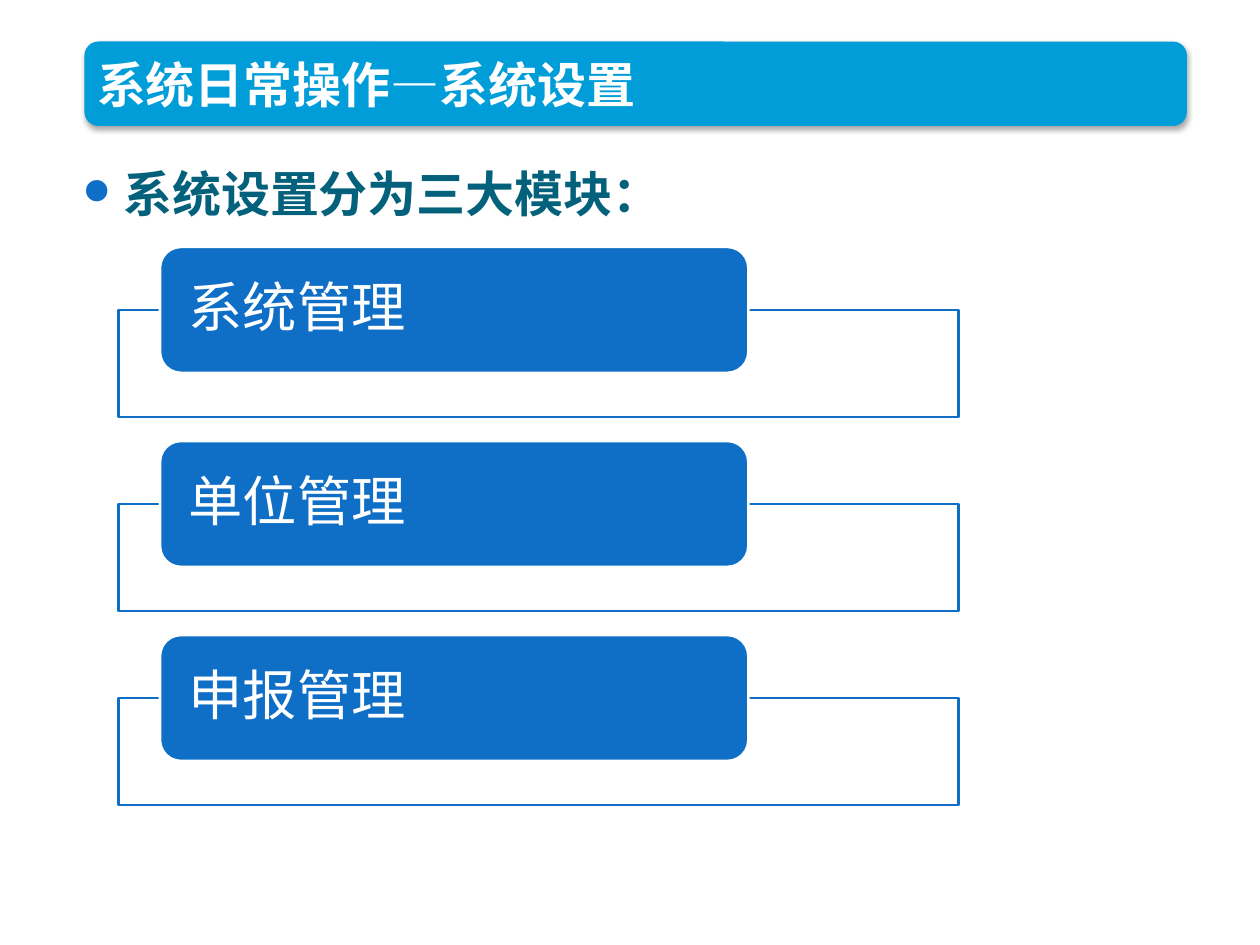
from lxml import etree
from pptx import Presentation
from pptx.dml.color import RGBColor
from pptx.enum import shapes, text
from pptx.oxml import ns
from pptx.util import Inches, Pt

WHITE = RGBColor(0xFF, 0xFF, 0xFF)
CYAN = RGBColor(0x00, 0x9D, 0xD9)
BLUE = RGBColor(0x0F, 0x6F, 0xC6)
TEAL = RGBColor(0x04, 0x61, 0x7B)
SANS = "DejaVu Sans"
CJK = "Noto Sans CJK SC"


def sub(node, tag, **attrs):
    kid = etree.SubElement(node, ns.qn(tag))
    for key, val in attrs.items():
        kid.set(key, str(val))
    return kid


def write(para, words, face, size, color, bold=False):
    para.alignment = text.PP_ALIGN.LEFT
    run = para.add_run()
    run.text = words
    run.font.name = face
    run.font.size = Pt(size)
    run.font.bold = bold
    run.font.color.rgb = color
    sub(run.font._element, "a:ea", typeface=face)


prs = Presentation()
prs.slide_width, prs.slide_height = Inches(10), Inches(7.5)
slide = prs.slides.add_slide(prs.slide_layouts[5])
tree = slide.shapes

spot = Inches(0.67), Inches(0.33), Inches(8.75), Inches(0.67)
bar = tree.add_shape(shapes.MSO_SHAPE.ROUNDED_RECTANGLE, *spot)
bar.fill.solid()
bar.fill.fore_color.rgb = CYAN
bar.line.fill.background()
glow = sub(sub(bar._element.spPr, "a:effectLst"), "a:outerShdw",
           blurRad=Pt(3), dist=Pt(2), dir=5400000, rotWithShape=0)
sub(sub(glow, "a:srgbClr", val="000000"), "a:alpha", val=35000)

title = tree.title
title.left, title.top, title.width, title.height = spot
title.text_frame.vertical_anchor = text.MSO_ANCHOR.MIDDLE
write(title.text_frame.paragraphs[0], "系统日常操作—系统设置", CJK, 28, WHITE, True)
bar._element.addnext(title._element)

body = tree.add_textbox(Inches(0.5), Inches(1.25), Inches(9.25), Inches(0.7))
body.text_frame.word_wrap = True
lead = body.text_frame.paragraphs[0]
props = lead._p.get_or_add_pPr()
props.set("marL", str(Inches(0.38)))
props.set("indent", str(Inches(-0.38)))
sub(sub(props, "a:buClr"), "a:srgbClr", val=str(BLUE))
sub(props, "a:buSzPct", val=150000)
sub(props, "a:buFont", typeface=SANS)
sub(props, "a:buChar", char="•")
write(lead, "系统设置分为三大模块：", SANS, 28, TEAL, True)

for i, name in enumerate(["系统管理", "单位管理", "申报管理"]):
    top = 1.96 + 1.54 * i
    frame = tree.add_shape(shapes.MSO_SHAPE.RECTANGLE, Inches(0.94),
                           Inches(top + 0.5), Inches(6.67), Inches(0.85))
    card = tree.add_shape(shapes.MSO_SHAPE.ROUNDED_RECTANGLE, Inches(1.27),
                          Inches(top), Inches(4.67), Inches(1))
    for item, fill, line in ((frame, WHITE, BLUE), (card, BLUE, WHITE)):
        item.shadow.inherit = False
        item.fill.solid()
        item.fill.fore_color.rgb = fill
        item.line.color.rgb = line
        item.line.width = Pt(1.5)
    tint = frame.fill._xPr.find(ns.qn("a:solidFill"))[0]
    sub(tint, "a:alpha", val=90000)
    box = card.text_frame
    box.word_wrap = True
    box.vertical_anchor = text.MSO_ANCHOR.MIDDLE
    box.margin_left = box.margin_right = Inches(0.18)
    box.margin_top = box.margin_bottom = 0
    box.paragraphs[0].line_spacing = 0.9
    write(box.paragraphs[0], name, SANS, 31, WHITE)

prs.save("out.pptx")
